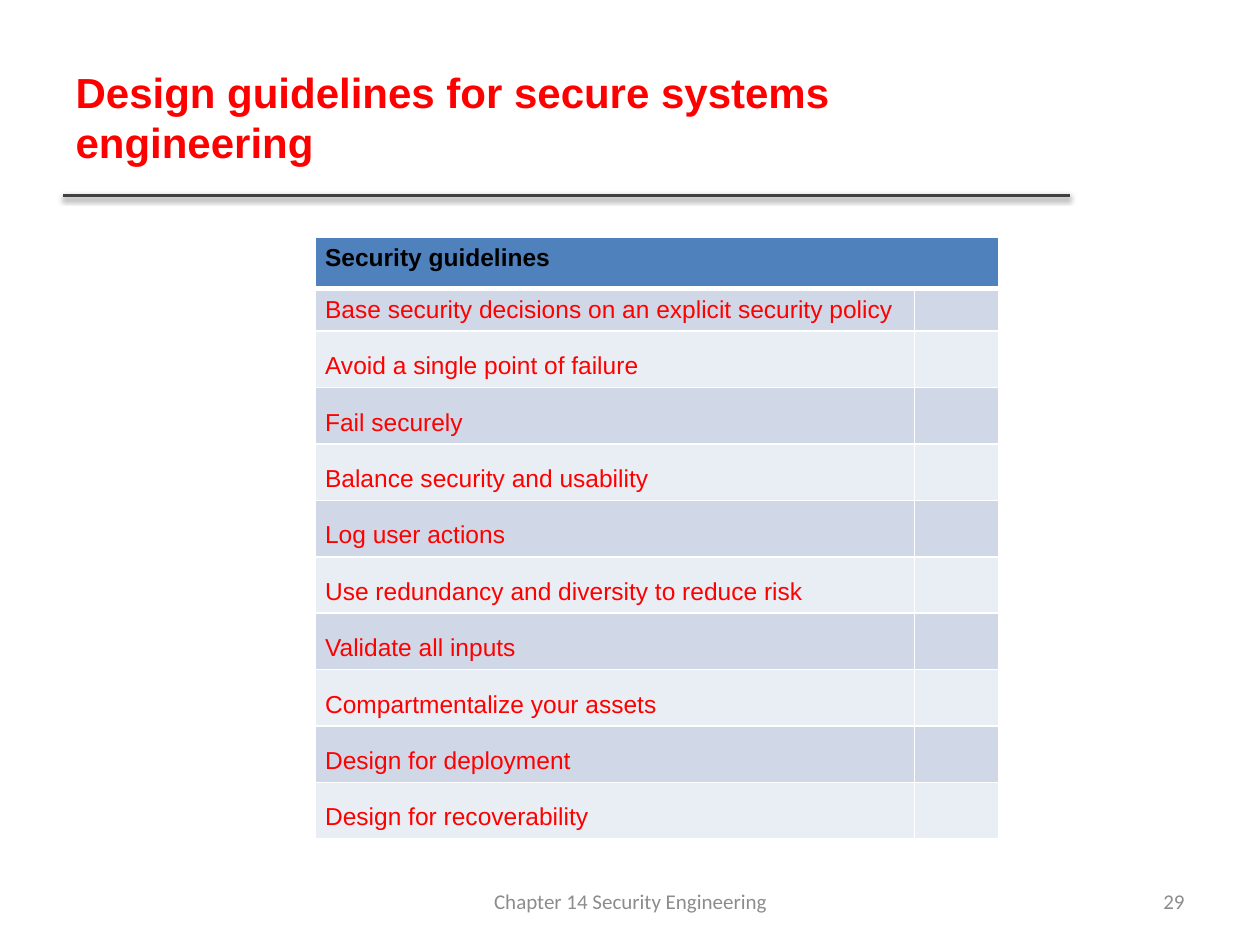
from lxml import etree
from pptx import Presentation
from pptx.dml.color import RGBColor
from pptx.enum.shapes import MSO_CONNECTOR
from pptx.enum.text import MSO_ANCHOR, PP_ALIGN
from pptx.oxml.ns import qn
from pptx.util import Inches, Pt

STRAIGHT = MSO_CONNECTOR.STRAIGHT
TOP, MIDDLE = MSO_ANCHOR.TOP, MSO_ANCHOR.MIDDLE
LEFT, CENTER, RIGHT, JUSTIFY = PP_ALIGN.LEFT, PP_ALIGN.CENTER, PP_ALIGN.RIGHT, PP_ALIGN.JUSTIFY

TITLE_ONLY = 5
RED, BLACK, WHITE, GREY = "FF0000", "000000", "FFFFFF", "8C8C8C"
HEADER_FILL = "4F81BD"
BAND_FILLS = ("D0D8E8", "E9EDF4")
GUIDELINES = (
    "Base security decisions on an explicit security policy",
    "Avoid a single point of failure",
    "Fail securely",
    "Balance security and usability",
    "Log user actions",
    "Use redundancy and diversity to reduce risk",
    "Validate all inputs",
    "Compartmentalize your assets",
    "Design for deployment",
    "Design for recoverability",
)


def color(value):
    return RGBColor.from_string(value)


def write(frame, text, font_name, size, text_color, bold=False, align=LEFT):
    paragraph = frame.paragraphs[0]
    paragraph.text = text
    paragraph.alignment = align
    font = paragraph.font
    font.name, font.size, font.bold = font_name, Pt(size), bold
    font.color.rgb = color(text_color)
    return paragraph


def add_title(slide, text):
    title = slide.shapes.title
    title.left, title.top = Inches(0.5), Inches(0.3)
    title.width, title.height = Inches(7.98), Inches(1.25)
    title.text_frame.vertical_anchor = MIDDLE
    write(title.text_frame, text, "Arial", 24, RED, bold=True)


def add_rule(slide):
    rule = slide.shapes.add_connector(STRAIGHT, Inches(0.5), Inches(1.55), Inches(8.49), Inches(1.55))
    rule.line.color.rgb = color("404040")
    rule.line.width = Pt(2)
    properties = rule._element.spPr
    effects = etree.SubElement(properties, qn("a:effectLst"))
    shadow = etree.SubElement(effects, qn("a:outerShdw"), blurRad=str(Pt(3.1)),
                              dist=str(Pt(1.6)), dir="5400000", rotWithShape="0")
    shadow_color = etree.SubElement(shadow, qn("a:srgbClr"), val=BLACK)
    etree.SubElement(shadow_color, qn("a:alpha"), val="38000")


def style_cell(cell, fill, bottom=1):
    cell.fill.solid()
    cell.fill.fore_color.rgb = color(fill)
    cell.margin_left = cell.margin_right = Inches(0.08)
    cell.margin_top = cell.margin_bottom = Inches(0)
    properties = cell._tc.get_or_add_tcPr()
    for index, (side, width) in enumerate((("L", 1), ("R", 1), ("T", 1), ("B", bottom))):
        border = etree.Element(qn(f"a:ln{side}"), w=str(Pt(width)))
        solid = etree.SubElement(border, qn("a:solidFill"))
        etree.SubElement(solid, qn("a:srgbClr"), val=WHITE)
        properties.insert(index, border)


def write_cell(cell, text, text_color, bold=False, anchor=MIDDLE):
    cell.margin_top = cell.margin_bottom = Inches(0.06)
    cell.vertical_anchor = anchor
    return write(cell.text_frame, text, "Arial", 14, text_color, bold, JUSTIFY)


def add_guidelines(slide):
    heights = [0.41, 0.33] + [0.44] * (len(GUIDELINES) - 1)
    frame = slide.shapes.add_table(len(heights), 2, Inches(2.5), Inches(1.88),
                                   Inches(5.43), Inches(sum(heights)))
    table = frame.table
    for column, width in zip(table.columns, (4.76, 0.67)):
        column.width = Inches(width)
    for row, height in zip(table.rows, heights):
        row.height = Inches(height)

    header = table.cell(0, 0)
    for cell in table.rows[0].cells:
        style_cell(cell, HEADER_FILL, bottom=3)
    header.merge(table.cell(0, 1))
    write_cell(header, "Security guidelines", BLACK, bold=True, anchor=TOP)

    for number, guideline in enumerate(GUIDELINES):
        cells = table.rows[number + 1].cells
        for cell in cells:
            style_cell(cell, BAND_FILLS[number % 2])
        paragraph = write_cell(cells[0], guideline, RED)
        if number:
            paragraph.line_spacing = 1.5


def add_footer(slide, text, left, width, align):
    box = slide.shapes.add_textbox(Inches(left), Inches(6.95), Inches(width), Inches(0.4))
    box.text_frame.word_wrap = True
    box.text_frame.vertical_anchor = MIDDLE
    write(box.text_frame, text, "Calibri", 12, GREY, align=align)


def main():
    deck = Presentation()
    deck.slide_width, deck.slide_height = Inches(10), Inches(7.5)
    slide = deck.slides.add_slide(deck.slide_layouts[TITLE_ONLY])
    add_rule(slide)
    add_title(slide, "Design guidelines for secure systems engineering")
    add_guidelines(slide)
    add_footer(slide, "Chapter 14 Security Engineering", 3.42, 3.17, CENTER)
    add_footer(slide, "29", 7.17, 2.33, RIGHT)
    deck.save("out.pptx")


if __name__ == "__main__":
    main()
